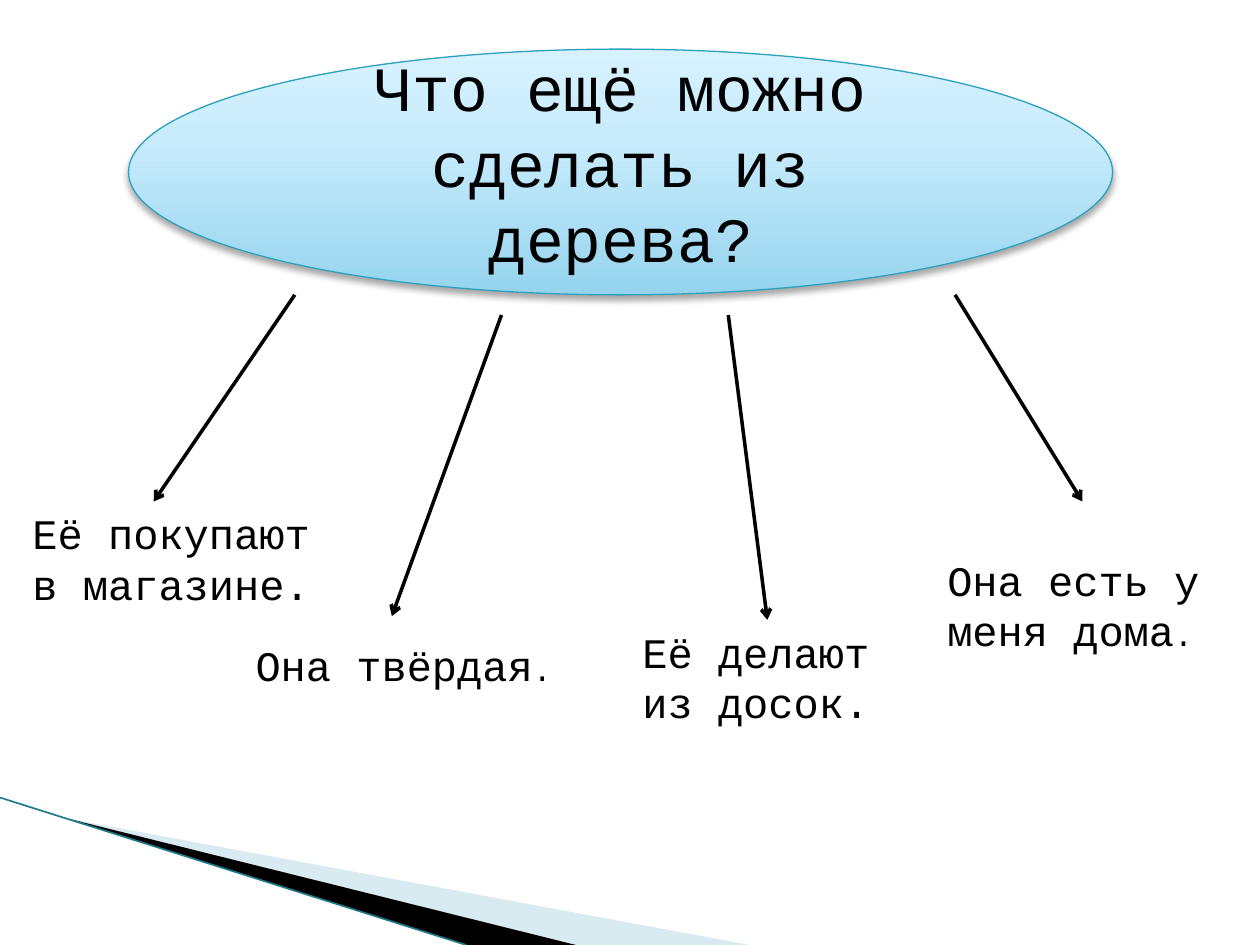
from dataclasses import dataclass

from lxml.etree import SubElement
from pptx import Presentation
from pptx.dml.color import RGBColor
from pptx.enum.shapes import MSO_CONNECTOR, MSO_SHAPE
from pptx.enum.text import MSO_ANCHOR, MSO_AUTO_SIZE, PP_ALIGN
from pptx.oxml import parse_xml
from pptx.oxml.ns import qn
from pptx.util import Inches, Pt

NAMESPACE = 'xmlns:a="http://schemas.openxmlformats.org/drawingml/2006/main"'


@dataclass(frozen=True)
class Theme:
    font: str = "Courier New"
    ink: str = "000000"
    oval_line: str = "2DA2BF"
    oval_stops: tuple = ((0, "96D4EE"), (65, "C9ECFC"), (100, "D7F2FF"))
    pale_wedge: str = "A0CBDC"
    edge: str = "1F7A8C"
    title_size: int = 36
    answer_size: int = 24
    small_size: int = 18


THEME = Theme()


def color(value):
    return RGBColor.from_string(value)


def write_text(paragraph, text, size=THEME.answer_size, align=PP_ALIGN.LEFT):
    paragraph.alignment = align
    run = paragraph.add_run()
    run.text = text
    run.font.name = THEME.font
    run.font.size = Pt(size)
    run.font.bold = False
    run.font.color.rgb = color(THEME.ink)


def add_line(slide, start, end, line_color, width, arrow=False):
    points = [Inches(value) for value in (*start, *end)]
    connector = slide.shapes.add_connector(MSO_CONNECTOR.STRAIGHT, *points)
    connector.line.color.rgb = color(line_color)
    connector.line.width = Pt(width)
    if arrow:
        SubElement(connector.line._get_or_add_ln(), qn("a:tailEnd"), type="arrow")
    SubElement(connector.element.spPr, qn("a:effectLst"))


def add_wedge(slide, points, fill_color, opacity=100):
    vertices = [(Inches(x), Inches(y)) for x, y in points]
    builder = slide.shapes.build_freeform(*vertices[0])
    builder.add_line_segments(vertices[1:], close=True)
    wedge = builder.convert_to_shape()
    wedge.shadow.inherit = False
    wedge.fill.solid()
    wedge.fill.fore_color.rgb = color(fill_color)
    wedge.line.fill.background()
    if opacity < 100:
        fill = wedge.element.spPr.find(qn("a:solidFill"))
        SubElement(fill[0], qn("a:alpha"), val=str(opacity * 1000))


def add_corner(slide, left, top, width, height):
    tip = (left + 0.55, top + 0.17)
    bottom = top + height
    add_wedge(slide, [tip, (left + width, bottom), (left + 4.56, bottom)],
              THEME.pale_wedge, opacity=40)
    add_wedge(slide, [tip, (left + 4.57, bottom), (left + 3.7, bottom)], THEME.ink)
    add_line(slide, (left, top), (left + 3.7, bottom), THEME.edge, 0.95)


def style_oval(oval):
    oval.line.color.rgb = color(THEME.oval_line)
    oval.line.width = Pt(0.75)
    stops = "".join(
        f'<a:gs pos="{position * 1000}"><a:srgbClr val="{value}"/></a:gs>'
        for position, value in THEME.oval_stops
    )
    properties = oval.element.spPr
    properties.find(qn("a:prstGeom")).addnext(parse_xml(
        f'<a:gradFill {NAMESPACE} rotWithShape="1"><a:gsLst>{stops}</a:gsLst>'
        '<a:lin ang="16200000" scaled="0"/></a:gradFill>'))
    properties.append(parse_xml(
        f'<a:effectLst {NAMESPACE}><a:outerShdw blurRad="{Pt(4)}" dist="{Pt(3)}" '
        f'dir="5400000" rotWithShape="0"><a:srgbClr val="{THEME.ink}">'
        '<a:alpha val="35000"/></a:srgbClr></a:outerShdw></a:effectLst>'))


def add_question(slide, text, left, top, width, height):
    oval = slide.shapes.add_shape(MSO_SHAPE.OVAL, Inches(left), Inches(top),
                                  Inches(width), Inches(height))
    style_oval(oval)
    title = slide.shapes.title
    oval.element.addnext(title.element)
    title_width = width * 0.5 ** 0.5
    title.left = Inches(left + (width - title_width) / 2)
    title.top = Inches(top - 0.08)
    title.width, title.height = Inches(title_width), Inches(height)
    frame = title.text_frame
    frame.word_wrap = True
    frame.auto_size = MSO_AUTO_SIZE.NONE
    frame.vertical_anchor = MSO_ANCHOR.MIDDLE
    write_text(frame.paragraphs[0], text, size=THEME.title_size, align=PP_ALIGN.CENTER)


def add_answer(slide, text, left, top, width, height, small_stop=False):
    box = slide.shapes.add_textbox(Inches(left), Inches(top), Inches(width), Inches(height))
    frame = box.text_frame
    frame.word_wrap = True
    frame.auto_size = MSO_AUTO_SIZE.SHAPE_TO_FIT_TEXT
    paragraph = frame.paragraphs[0]
    write_text(paragraph, text)
    write_text(paragraph, ".", size=THEME.small_size if small_stop else THEME.answer_size)


def main():
    presentation = Presentation()
    presentation.slide_width, presentation.slide_height = Inches(10), Inches(7.5)
    slide = presentation.slides.add_slide(presentation.slide_layouts[5])
    add_corner(slide, 0, 6.33, 5.95, 1.17)
    add_question(slide, "Что ещё можно сделать из дерева?", 1.02, 0.39, 7.81, 1.95)
    branches = [
        ((2.34, 2.34), (1.22, 3.98), "Её покупают в магазине", (0.16, 3.98, 2.5, 0.91), False),
        ((3.98, 2.5), (3.11, 4.89), "Она твёрдая", (1.93, 5.03, 2.66, 0.5), True),
        ((5.78, 2.5), (6.09, 4.92), "Её делают из досок", (5, 4.92, 2.19, 0.91), False),
        ((7.58, 2.34), (8.59, 3.98), "Она есть у меня дома", (7.42, 4.35, 2.34, 0.91), True),
    ]
    for start, end, answer, box, small_stop in branches:
        add_line(slide, start, end, THEME.ink, 2, arrow=True)
        add_answer(slide, answer, *box, small_stop=small_stop)
    presentation.save("out.pptx")


if __name__ == "__main__":
    main()
